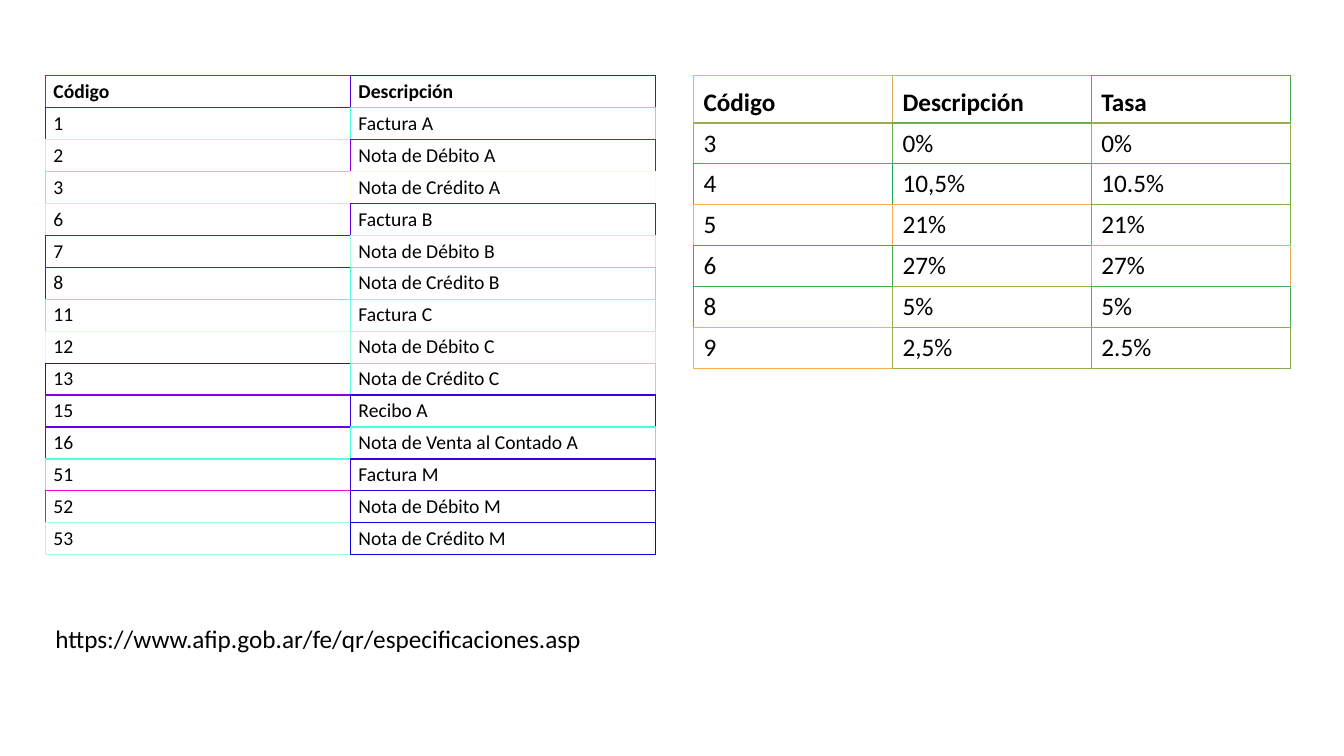
from dataclasses import dataclass

from lxml.etree import SubElement
from pptx import Presentation
from pptx.dml.color import RGBColor
from pptx.enum.text import MSO_ANCHOR, MSO_AUTO_SIZE
from pptx.oxml.ns import qn
from pptx.util import Inches, Pt


@dataclass(frozen=True)
class Theme:
    font: str = "Calibri"
    text: str = "000000"
    cell: str = "FFFFFF"
    small: int = 14
    body: int = 18
    thin: float = 0.75
    rule: float = 1


# Each row: cell texts, then the edge colour of each cell.
VOUCHERS = [
    (("Código", "Descripción"), ("B801E1", "5801E1")),
    (("1", "Factura A"), ("6800E1", "48FCE0")),
    (("2", "Nota de Débito A"), ("A8FFE0", "8801E1")),
    (("3", "Nota de Crédito A"), ("58FEE0", "F8FDE0")),
    (("6", "Factura B"), ("A8FFE0", "6800E1")),
    (("7", "Nota de Débito B"), ("6800E1", "A8FFE0")),
    (("8", "Nota de Crédito B"), ("6800E1", "48FCE0")),
    (("11", "Factura C"), ("58FEE0", "78FCE0")),
    (("12", "Nota de Débito C"), ("D8FCE0", "A8FCE0")),
    (("13", "Nota de Crédito C"), ("3800E1", "58FEE0")),
    (("15", "Recibo A"), ("8801E1", "3800E1")),
    (("16", "Nota de Venta al Contado A"), ("6800E1", "48FCE0")),
    (("51", "Factura M"), ("58FEE0", "3800E1")),
    (("52", "Nota de Débito M"), ("F800E1", "3800E1")),
    (("53", "Nota de Crédito M"), ("A8FCE0", "0803E1")),
]
TAX_RATES = [
    (("Código", "Descripción", "Tasa"), ("F8AE4F", "D8AD4F", "48B04F")),
    (("3", "0%", "0%"), ("98AE4F", "68AE4F", "98AE4F")),
    (("4", "10,5%", "10.5%"), ("58AC4F", "18AD4F", "68AB4F")),
    (("5", "21%", "21%"), ("F8AE4F", "F8AB4F", "78B04F")),
    (("6", "27%", "27%"), ("38AE4F", "48AD4F", "E8AC4F")),
    (("8", "5%", "5%"), ("38AE4F", "98AE4F", "48B04F")),
    (("9", "2,5%", "2.5%"), ("F8AE4F", "98AE4F", "88AC4F")),
]


class SlideBuilder:
    """Places elements on one slide; lengths are percentages of its size."""

    def __init__(self, prs, theme):
        self.prs, self.theme = prs, theme
        self.slide = prs.slides.add_slide(prs.slide_layouts[6])

    def x(self, share):
        return round(self.prs.slide_width * share / 100)

    def y(self, share):
        return round(self.prs.slide_height * share / 100)

    def style(self, p, size, bold=False):
        p.font.name = self.theme.font
        p.font.size = Pt(size)
        p.font.bold = bold
        p.font.color.rgb = RGBColor.from_string(self.theme.text)

    def borders(self, cell, colours, row, col):
        """Edges take the cell's colour; right and bottom take the next cell's."""
        last_row, last_col = len(colours) - 1, len(colours[0]) - 1
        thin, rule = self.theme.thin, self.theme.rule
        own = colours[row][col]
        right = colours[row][min(col + 1, last_col)]
        below = colours[min(row + 1, last_row)][col]
        edges = [
            ("a:lnL", own, thin),
            ("a:lnR", right, thin),
            ("a:lnT", own, rule if row else thin),
            ("a:lnB", below, rule if row < last_row else thin),
        ]
        tc_pr = cell._tc.get_or_add_tcPr()
        for tag, colour, width in edges:
            ln = SubElement(tc_pr, qn(tag), w=str(Pt(width)))
            SubElement(SubElement(ln, qn("a:solidFill")), qn("a:srgbClr"), val=colour)

    def table(self, rows, left, top, width, header_height, row_height, size, insets=None):
        n_cols = len(rows[0][0])
        colours = [edge for _, edge in rows]
        height = header_height + row_height * (len(rows) - 1)
        tbl = self.slide.shapes.add_table(
            len(rows), n_cols, self.x(left), self.y(top), self.x(width), self.y(height)
        ).table
        tbl.first_row = tbl.horz_banding = False
        for i, (texts, _) in enumerate(rows):
            tbl.rows[i].height = self.y(row_height if i else header_height)
            for j, text in enumerate(texts):
                cell = tbl.cell(i, j)
                cell.text = text
                cell.vertical_anchor = MSO_ANCHOR.MIDDLE if i else MSO_ANCHOR.BOTTOM
                if insets:
                    side, end = insets
                    cell.margin_left = cell.margin_right = Inches(side)
                    cell.margin_top = cell.margin_bottom = Inches(end)
                self.style(cell.text_frame.paragraphs[0], size, bold=i == 0)
                self.borders(cell, colours, i, j)
                cell.fill.solid()
                cell.fill.fore_color.rgb = RGBColor.from_string(self.theme.cell)

    def text(self, text, left, top, width, height):
        sp = self.slide.shapes.add_textbox(
            self.x(left), self.y(top), self.x(width), self.y(height)
        )
        tf = sp.text_frame
        tf.word_wrap = False
        tf.auto_size = MSO_AUTO_SIZE.SHAPE_TO_FIT_TEXT
        tf.text = text
        self.style(tf.paragraphs[0], self.theme.body)


def main():
    prs = Presentation()
    prs.slide_width, prs.slide_height = Inches(13.33), Inches(7.5)
    theme = Theme()
    s = SlideBuilder(prs, theme)
    left, top = 3.38, 10
    s.table(VOUCHERS, left, top, 45.39, 4.23, 4.23, theme.small, insets=(0.08, 0.04))
    s.table(TAX_RATES, 51.6, top, 44.4, 6.27, 5.33, theme.body)
    s.text("https://www.afip.gob.ar/fe/qr/especificaciones.asp", left, 81.73, 41.1, 5.33)
    prs.save("out.pptx")


if __name__ == "__main__":
    main()
